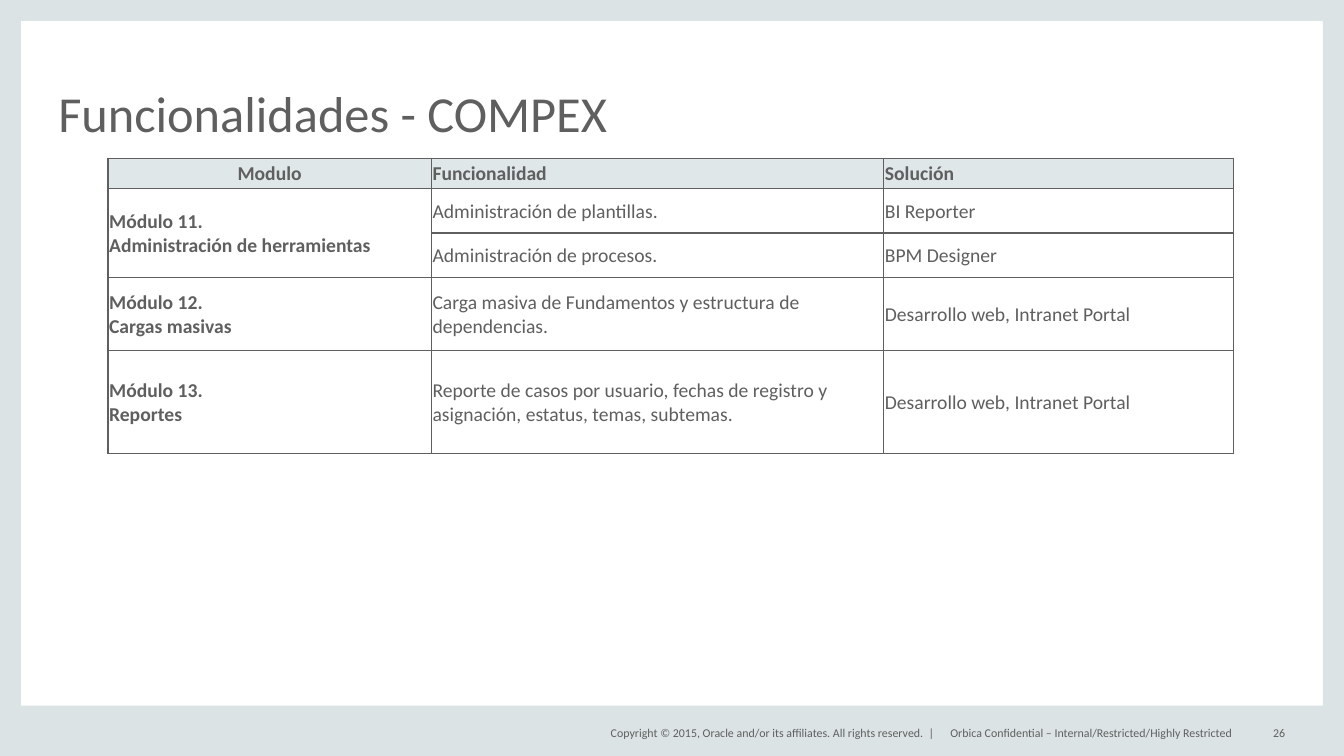
"""Build the COMPEX functionality slide: framed page, title, module table and footer."""
from copy import deepcopy

from lxml import etree
from pptx import Presentation
from pptx.dml.color import RGBColor
from pptx.enum.shapes import MSO_SHAPE
from pptx.enum.text import MSO_ANCHOR, MSO_AUTO_SIZE, PP_ALIGN
from pptx.oxml.ns import qn
from pptx.util import Cm, Pt

LEFT, CENTER, RIGHT = PP_ALIGN.LEFT, PP_ALIGN.CENTER, PP_ALIGN.RIGHT
MIDDLE, BOTTOM = MSO_ANCHOR.MIDDLE, MSO_ANCHOR.BOTTOM
RECTANGLE, NO_AUTOFIT = MSO_SHAPE.RECTANGLE, MSO_AUTO_SIZE.NONE

FONT = "Calibri"
GREY, FRAME_COLOR, HEADER_COLOR = "5F5F5F", "DCE3E4", "DFE7E9"
PAGE_WIDTH, PAGE_HEIGHT = 33.87, 19.05
FRAME_EDGE, FOOTER_BAND = 0.53, 1.27

TITLE = "Funcionalidades - COMPEX"
HEADER = ("Modulo", "Funcionalidad", "Solución")
MODULES = [
    ("Módulo 11. \nAdministración de herramientas", [
        ("Administración de plantillas.", "BI Reporter", 1.12),
        ("Administración de procesos.", "BPM Designer", 1.12),
    ]),
    ("Módulo 12. \nCargas masivas", [
        ("Carga masiva de Fundamentos y estructura de dependencias.",
         "Desarrollo web, Intranet Portal", 1.85),
    ]),
    ("Módulo 13. \nReportes", [
        ("Reporte de casos por usuario, fechas de registro y asignación, "
         "estatus, temas, subtemas.", "Desarrollo web, Intranet Portal", 2.59),
    ]),
]
HEADER_HEIGHT = 0.76
COLUMN_WIDTHS = (8.15, 11.4, 8.82)
TABLE_LEFT, TABLE_TOP = 2.72, 3.99
FOOTER = [
    ("Copyright © 2015, Oracle and/or its affiliates. All rights reserved.  |", 14.55, 9, RIGHT),
    ("Orbica Confidential – Internal/Restricted/Highly Restricted", 23.95, 7.6, LEFT),
    ("26", 31.32, 1.07, RIGHT),
]
FOOTER_TOP, FOOTER_HEIGHT = 18.21, 0.51


def color(value):
    return RGBColor.from_string(value)


def write(frame, text, size, bold=False, align=LEFT, spacing=None):
    paragraph = frame.paragraphs[0]
    paragraph.text = text
    paragraph.alignment = align
    paragraph.line_spacing = spacing
    for run in paragraph.runs:
        run.font.name = FONT
        run.font.size = Pt(size)
        run.font.bold = bold
        run.font.color.rgb = color(GREY)
    for line_break in paragraph._p.findall(qn("a:br")):
        line_break.append(deepcopy(paragraph.runs[0]._r.rPr))


def clear_insets(frame, anchor):
    frame.margin_left = frame.margin_right = frame.margin_top = frame.margin_bottom = 0
    frame.vertical_anchor = anchor
    frame.word_wrap = True
    frame.auto_size = NO_AUTOFIT


def add_borders(cell):
    properties = cell._tc.get_or_add_tcPr()
    for side in ("a:lnL", "a:lnR", "a:lnT", "a:lnB"):
        line = etree.SubElement(properties, qn(side), w=str(Pt(1)))
        fill = etree.SubElement(line, qn("a:solidFill"))
        etree.SubElement(fill, qn("a:srgbClr"), val=GREY)


def fill_cell(cell, text, bold=False, align=LEFT, background=None):
    cell.margin_left = cell.margin_right = cell.margin_top = Cm(0.03)
    cell.margin_bottom = 0
    cell.vertical_anchor = MIDDLE
    write(cell.text_frame, text, 14, bold=bold, align=align)
    if background:
        cell.fill.solid()
        cell.fill.fore_color.rgb = color(background)
    else:
        cell.fill.background()


def add_frame(slide):
    bands = [
        (0, 0, FRAME_EDGE, PAGE_HEIGHT),
        (PAGE_WIDTH - FRAME_EDGE, 0, FRAME_EDGE, PAGE_HEIGHT),
        (0, PAGE_HEIGHT - FOOTER_BAND, PAGE_WIDTH, FOOTER_BAND),
        (0, 0, PAGE_WIDTH, FRAME_EDGE),
    ]
    for band_place in bands:
        band = slide.shapes.add_shape(RECTANGLE, *map(Cm, band_place))
        band.shadow.inherit = False
        band.fill.solid()
        band.fill.fore_color.rgb = color(FRAME_COLOR)
        band.line.fill.background()


def add_title(slide):
    title = slide.shapes.title
    title.left, title.top, title.width, title.height = map(Cm, (1.47, 1.12, 30.91, 2.46))
    clear_insets(title.text_frame, BOTTOM)
    write(title.text_frame, TITLE, 36, spacing=0.8)


def add_footer(slide):
    for text, left, width, align in FOOTER:
        note = slide.shapes.add_textbox(Cm(left), Cm(FOOTER_TOP), Cm(width), Cm(FOOTER_HEIGHT))
        clear_insets(note.text_frame, MIDDLE)
        write(note.text_frame, text, 8.5, align=align)


def add_modules(slide):
    heights = [HEADER_HEIGHT] + [item[2] for _, items in MODULES for item in items]
    table = slide.shapes.add_table(
        len(heights), len(HEADER), Cm(TABLE_LEFT), Cm(TABLE_TOP),
        Cm(sum(COLUMN_WIDTHS)), Cm(sum(heights))).table
    table.first_row = table.horz_banding = False
    for column, width in zip(table.columns, COLUMN_WIDTHS):
        column.width = Cm(width)
    for row, height in zip(table.rows, heights):
        row.height = Cm(height)
    for cell in table.iter_cells():
        add_borders(cell)

    for column, heading in enumerate(HEADER):
        fill_cell(table.cell(0, column), heading, bold=True,
                  align=LEFT if column else CENTER, background=HEADER_COLOR)
    row = 1
    for module, items in MODULES:
        module_cell = table.cell(row, 0)
        if len(items) > 1:
            module_cell.merge(table.cell(row + len(items) - 1, 0))
        fill_cell(module_cell, module, bold=True)
        for feature, solution, _ in items:
            fill_cell(table.cell(row, 1), feature)
            fill_cell(table.cell(row, 2), solution)
            row += 1


def main():
    deck = Presentation()
    deck.slide_width, deck.slide_height = Cm(PAGE_WIDTH), Cm(PAGE_HEIGHT)
    slide = deck.slides.add_slide(deck.slide_layouts[5])
    add_frame(slide)
    add_title(slide)
    add_footer(slide)
    add_modules(slide)
    deck.save("out.pptx")


if __name__ == "__main__":
    main()
